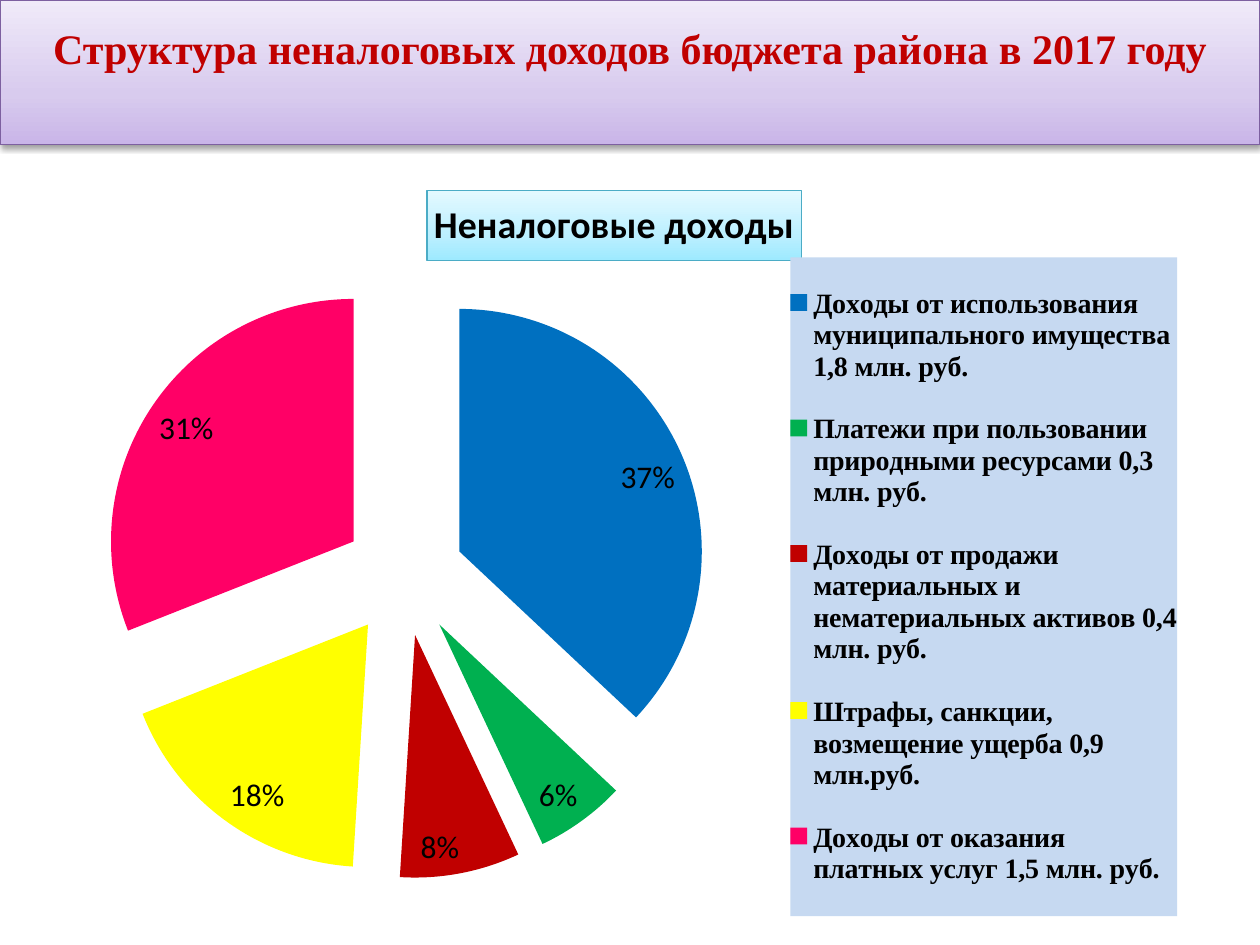
from lxml import etree
from pptx import Presentation
from pptx.chart.data import CategoryChartData
from pptx.dml.color import RGBColor
from pptx.enum import chart as chart_enum, text
from pptx.oxml import ns
from pptx.util import Cm, Pt

# Content
HEADING = "Структура неналоговых доходов бюджета района в 2017 году"
CHART_TITLE = "Неналоговые доходы"
INCOME = [  # category, share in percent, slice colour
    ("Доходы от использования муниципального имущества 1,8 млн. руб.", 37, RGBColor(0x00, 0x70, 0xC0)),
    ("Платежи при пользовании природными ресурсами 0,3 млн. руб.", 6, RGBColor(0x00, 0xB0, 0x50)),
    ("Доходы от продажи материальных и нематериальных активов 0,4 млн. руб.", 8, RGBColor(0xC0, 0x00, 0x00)),
    ("Штрафы, санкции, возмещение ущерба 0,9 млн.руб.", 18, RGBColor(0xFF, 0xFF, 0x00)),
    ("Доходы от оказания платных услуг 1,5 млн. руб.", 31, RGBColor(0xFF, 0x00, 0x66)),
]

# Style
BLACK = RGBColor(0, 0, 0)
RED = RGBColor(0xC0, 0x00, 0x00)
PURPLE = RGBColor(0x7D, 0x60, 0xA0)
TEAL = RGBColor(0x4B, 0xAC, 0xC6)
LEGEND_BLUE = RGBColor(0xC6, 0xD9, 0xF1)
LILAC_STOPS = [(0, RGBColor(0xC9, 0xB5, 0xE8)), (35, RGBColor(0xD8, 0xCB, 0xEE)),
               (100, RGBColor(0xF0, 0xEA, 0xF9))]
AQUA_STOPS = [(0, RGBColor(0x9E, 0xEA, 0xFF)), (35, RGBColor(0xBB, 0xEF, 0xFF)),
              (100, RGBColor(0xE4, 0xF9, 0xFF))]
SERIF, SANS = "Times New Roman", "Calibri"
EXPLOSION = 25


def add_element(parent, tag, index=None, **attributes):
    element = etree.Element(ns.qn(tag), {key: str(value) for key, value in attributes.items()})
    parent.insert(len(parent) if index is None else index, element)
    return element


def set_gradient(fill, owner, stops):
    """Fill from bottom to top with the given colour stops."""
    fill.gradient()
    fill.gradient_angle = 90
    stop_list = next(owner.iter(ns.qn("a:gsLst")))
    for old_stop in list(stop_list):
        stop_list.remove(old_stop)
    for position, color in stops:
        stop = add_element(stop_list, "a:gs", pos=position * 1000)
        add_element(stop, "a:srgbClr", val=color)


def set_layout(element, index, **fractions):
    """Place a chart part by fractions of the chart area."""
    for old_layout in element.findall(ns.qn("c:layout")):
        element.remove(old_layout)
    manual = add_element(add_element(element, "c:layout", index), "c:manualLayout")
    if "plotArea" in element.tag:
        add_element(manual, "c:layoutTarget", val="inner")
    for axis in "xy":
        add_element(manual, f"c:{axis}Mode", val="edge")
    for key, value in fractions.items():
        add_element(manual, f"c:{key}", val=value)


def set_font(font, name, size, bold, color=BLACK):
    font.name, font.size, font.bold = name, Pt(size), bold
    font.color.rgb = color


presentation = Presentation()
presentation.slide_width, presentation.slide_height = Cm(25.4), Cm(19.05)
slide = presentation.slides.add_slide(presentation.slide_layouts[5])

# Heading band
heading = slide.shapes.title
heading.left, heading.top, heading.width, heading.height = Cm(0), Cm(0), Cm(25.4), Cm(2.92)
set_gradient(heading.fill, heading._element.spPr, LILAC_STOPS)
heading.line.color.rgb = PURPLE
heading.line.width = Pt(0.75)
effects = add_element(heading._element.spPr, "a:effectLst")
shadow = add_element(effects, "a:outerShdw", blurRad=Pt(3.1), dist=Pt(1.6), dir=5400000, rotWithShape=0)
add_element(add_element(shadow, "a:srgbClr", val=BLACK), "a:alpha", val=38000)
heading.text_frame.vertical_anchor = text.MSO_ANCHOR.MIDDLE
paragraph = heading.text_frame.paragraphs[0]
paragraph.alignment = text.PP_ALIGN.CENTER
set_font(paragraph.font, SERIF, 24, True, RED)
run = paragraph.add_run()
run.text = HEADING
set_font(run.font, SERIF, 24, True, RED)
paragraph.add_line_break()

# Pie chart
data = CategoryChartData()
data.categories = [category for category, _, _ in INCOME]
data.add_series(CHART_TITLE, [share for _, share, _ in INCOME])
chart = slide.shapes.add_chart(chart_enum.XL_CHART_TYPE.PIE, Cm(0.58), Cm(3.38),
                               Cm(23.62), Cm(15.09), data).chart
set_font(chart.font, SANS, 18, False)
plot = chart.plots[0]
plot.vary_by_categories = True
set_layout(chart._chartSpace.chart.plotArea, 0, x=0.06, y=0.14, w=0.52, h=0.81)

# Separated slices with percentages
series = plot.series[0]
series_name = series._element.find(ns.qn("c:tx"))
add_element(series._element, "c:explosion", series._element.index(series_name) + 1, val=EXPLOSION)
for index, (_, _, color) in enumerate(INCOME):
    slice_fill = series.points[index].format.fill
    slice_fill.solid()
    slice_fill.fore_color.rgb = color
plot.has_data_labels = True
labels = plot.data_labels
labels.show_percentage, labels.show_value = True, False
labels.number_format, labels.number_format_is_linked = "0%", False
labels.position = chart_enum.XL_LABEL_POSITION.INSIDE_END
set_font(labels.font, SANS, 18, False)

# Chart title
chart.has_title = True
title = chart.chart_title
run = title.text_frame.paragraphs[0].add_run()
run.text = CHART_TITLE
set_font(run.font, SANS, 21.6, True)
set_gradient(title.format.fill, title._element, AQUA_STOPS)
title.format.line.color.rgb = TEAL
title.format.line.width = Pt(0.75)
set_layout(title._element, 1, x=0.34, y=0.03)

# Legend
chart.has_legend = True
legend = chart.legend
legend.position = chart_enum.XL_LEGEND_POSITION.RIGHT
legend.include_in_layout = False
set_font(legend.font, SERIF, 16, True)
set_layout(legend._element, 1, x=0.65, y=0.12, w=0.33, h=0.88)
text_properties = legend._element.find(ns.qn("c:txPr"))
panel = add_element(legend._element, "c:spPr", legend._element.index(text_properties))
add_element(add_element(panel, "a:solidFill"), "a:srgbClr", val=LEGEND_BLUE)

presentation.save("out.pptx")
